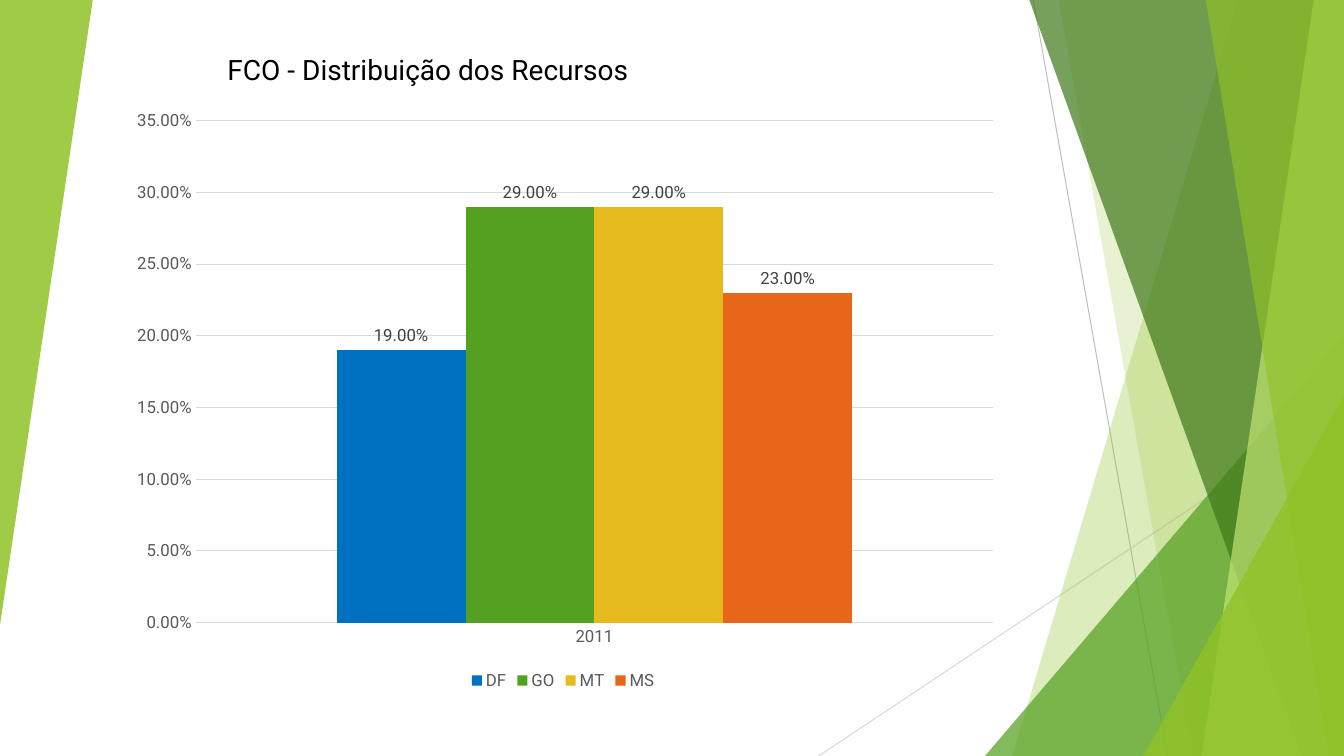
from pptx import Presentation
from pptx.chart.data import CategoryChartData
from pptx.dml.color import RGBColor
from pptx.enum.chart import XL_CHART_TYPE, XL_LABEL_POSITION, XL_LEGEND_POSITION, XL_TICK_MARK
from pptx.enum.shapes import MSO_CONNECTOR, MSO_SHAPE
from pptx.enum.text import MSO_ANCHOR, MSO_AUTO_SIZE, PP_ALIGN
from pptx.oxml import parse_xml
from pptx.oxml.ns import nsdecls, qn
from pptx.util import Inches, Pt
from lxml import etree

FONT = "Roboto"
TITLE = "FCO - Distribuição dos Recursos"
TITLE_BOX = (0, -12, 63.69, 24)
CHART_BOX = (8.55, 12.8, 66.69, 79.07)
PLOT_BOX = {"x": 0.09, "y": 0.04, "w": 0.89, "h": 0.84}
YEAR = "2011"
STATES = [("DF", 0.19, "0070C0"), ("GO", 0.29, "54A021"),
          ("MT", 0.29, "E6B91E"), ("MS", 0.23, "E76618")]
RAYS = [((76.89, 0), (86.87, 100), "BFBFBF"), ((100, 53.73), (60.92, 100), "D9D9D9")]
FACETS = [
    ("band", (92.12, 75.32), "90C226", 30),
    ("band", (78.77, 88.75), "90C226", 20),
    ("wedge", (73.29, 44.4, 26.71, 55.6), "54A021", 72),
    ("band", (76.59, 96.85), "3F7819", 70),
    ("band", (97.75, 89.42), "C0E474", 70),
    ("band", (89.72, 98.87), "90C226", 65),
    ("wedge", (85.07, 52.4, 14.93, 47.6), "90C226", 80),
    ("left wedge", (0, 0, 6.9, 82.67), "90C226", 85),
]

deck = Presentation()
deck.slide_width, deck.slide_height = Inches(13.33), Inches(7.5)
slide = deck.slides.add_slide(deck.slide_layouts[5])


def color(code):
    """Turn a hex string into a colour."""
    return RGBColor.from_string(code)


def place(*shares):
    """Turn percentages of width and height, in turn, into lengths."""
    sides = (deck.slide_width, deck.slide_height)
    return [round(share * sides[i % 2] / 100) for i, share in enumerate(shares)]


def style(font, size, code):
    """Set the typeface, size and colour of a font."""
    font.name, font.size, font.bold = FONT, Pt(size), False
    font.color.rgb = color(code)


def add_ray(start, end, code):
    """Draw one thin background line."""
    ray = slide.shapes.add_connector(MSO_CONNECTOR.STRAIGHT, *place(*start, *end))
    ray.line.color.rgb, ray.line.width = color(code), Pt(0.75)
    etree.SubElement(ray._element.spPr, qn("a:effectLst"))


def add_facet(kind, shares, code, opacity):
    """Draw one translucent band or wedge of the background."""
    if kind == "band":
        top, bottom = shares
        outline = slide.shapes.build_freeform(*place(top, 0))
        corners = [(100, 0), (100, 100), (bottom, 100)]
        outline.add_line_segments([place(*corner) for corner in corners], close=True)
        facet = outline.convert_to_shape()
    else:
        facet = slide.shapes.add_shape(MSO_SHAPE.ISOSCELES_TRIANGLE, *place(*shares))
        facet.adjustments[0] = 1
        facet.rotation = 180 if kind == "left wedge" else 0
    facet.shadow.inherit = False
    facet.line.fill.background()
    facet.fill.solid()
    facet.fill.fore_color.rgb = color(code)
    tint = facet._element.spPr.find(qn("a:solidFill"))[0]
    etree.SubElement(tint, qn("a:alpha")).set("val", str(opacity * 1000))


def add_distribution():
    """Draw the column chart of shares by state."""
    shares = CategoryChartData(number_format="0.00%")
    shares.categories = [YEAR]
    for state, share, _ in STATES:
        shares.add_series(state, [share])
    chart = slide.shapes.add_chart(
        XL_CHART_TYPE.COLUMN_CLUSTERED, *place(*CHART_BOX), shares).chart
    style(chart.font, 12, "595959")
    chart.has_title = False
    chart.has_legend = True
    chart.legend.position = XL_LEGEND_POSITION.BOTTOM
    chart.legend.include_in_layout = False
    style(chart.legend.font, 12, "595959")

    for axis in (chart.category_axis, chart.value_axis):
        axis.major_tick_mark = axis.minor_tick_mark = XL_TICK_MARK.NONE
        style(axis.tick_labels.font, 12, "595959")
    scale = chart.value_axis
    scale.minimum_scale, scale.maximum_scale, scale.major_unit = 0, 0.35, 0.05
    scale.tick_labels.number_format = "0.00%"
    scale.tick_labels.number_format_is_linked = False
    scale.format.line.fill.background()
    for rule in (chart.category_axis.format.line, scale.major_gridlines.format.line):
        rule.color.rgb, rule.width = color("D9D9D9"), Pt(0.75)

    columns = chart.plots[0]
    columns.gap_width, columns.overlap, columns.vary_by_categories = 219, 0, False
    for column, (_, _, code) in zip(columns.series, STATES):
        column.format.fill.solid()
        column.format.fill.fore_color.rgb = color(code)
        labels = column.data_labels
        labels.show_value, labels.position = True, XL_LABEL_POSITION.OUTSIDE_END
        labels.number_format, labels.number_format_is_linked = "0.00%", False
        style(labels.font, 12, "404040")

    edges = "".join(f'<c:{side}Mode val="edge"/>' for side in "xy")
    sizes = "".join(f'<c:{side} val="{share}"/>' for side, share in PLOT_BOX.items())
    plot_area = chart._chartSpace.chart.plotArea
    for layout in plot_area.findall(qn("c:layout")):
        plot_area.remove(layout)
    plot_area.insert(0, parse_xml(
        f'<c:layout {nsdecls("c")}><c:manualLayout><c:layoutTarget val="inner"/>'
        f'{edges}{sizes}</c:manualLayout></c:layout>'))


def add_title():
    """Fill and format the title placeholder."""
    title = slide.shapes.title
    title.left, title.top, title.width, title.height = place(*TITLE_BOX)
    frame = title.text_frame
    frame.text = TITLE
    frame.word_wrap, frame.auto_size = True, MSO_AUTO_SIZE.NONE
    frame.vertical_anchor = MSO_ANCHOR.BOTTOM
    heading = frame.paragraphs[0]
    heading.alignment = PP_ALIGN.CENTER
    style(heading.font, 20, "000000")


for ray in RAYS:
    add_ray(*ray)
for facet in FACETS:
    add_facet(*facet)
add_distribution()
add_title()
deck.save("out.pptx")
